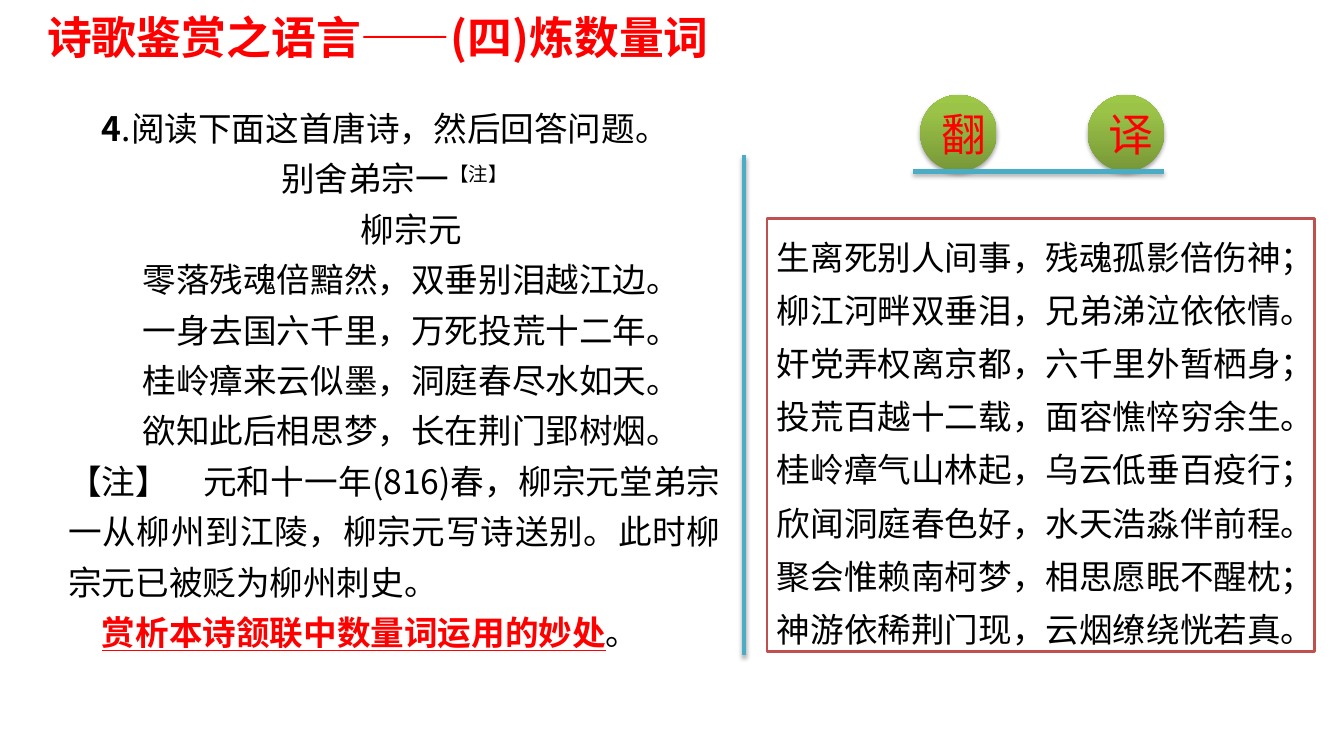
from lxml.etree import fromstring
from pptx import Presentation
from pptx.dml.color import RGBColor
from pptx.enum.shapes import MSO_CONNECTOR as Line, MSO_SHAPE as Shape
from pptx.enum.text import MSO_ANCHOR as Anchor, MSO_AUTO_SIZE as Fit, PP_ALIGN as Align
from pptx.oxml.ns import qn
from pptx.util import Cm, Pt

FACE = "Noto Sans CJK SC"
RED, BLACK, TEAL = "FF0000", "000000", "4BACC6"
NS = 'xmlns:a="http://schemas.openxmlformats.org/drawingml/2006/main"'
GLOW = f"""<a:effectLst {NS}><a:outerShdw blurRad="40000" dist="23000" dir="5400000"
 rotWithShape="0"><a:srgbClr val="000000"><a:alpha val="35000"/></a:srgbClr>
 </a:outerShdw></a:effectLst>"""
GREEN = f"""<a:gradFill {NS} rotWithShape="1"><a:gsLst>
 <a:gs pos="0"><a:srgbClr val="779737"/></a:gs>
 <a:gs pos="80000"><a:srgbClr val="9BC348"/></a:gs>
 <a:gs pos="100000"><a:srgbClr val="9DC746"/></a:gs>
 </a:gsLst><a:lin ang="16200000" scaled="0"/></a:gradFill>"""

POEM = [
    "零落残魂倍黯然，双垂别泪越江边。",
    "一身去国六千里，万死投荒十二年。",
    "桂岭瘴来云似墨，洞庭春尽水如天。",
    "欲知此后相思梦，长在荆门郢树烟。",
]
NOTE = "【注】\u3000元和十一年(816)春，柳宗元堂弟宗一从柳州到江陵，柳宗元写诗送别。此时柳宗元已被贬为柳州刺史。".replace("\u3000", "　")
PROSE = [
    "生离死别人间事，残魂孤影倍伤神；",
    "柳江河畔双垂泪，兄弟涕泣依依情。",
    "奸党弄权离京都，六千里外暂栖身；",
    "投荒百越十二载，面容憔悴穷余生。",
    "桂岭瘴气山林起，乌云低垂百疫行；",
    "欣闻洞庭春色好，水天浩淼伴前程。",
    "聚会惟赖南柯梦，相思愿眠不醒枕；",
    "神游依稀荆门现，云烟缭绕恍若真。",
]


def paint(target, tint):
    """Give a fill, line or font colour from a hex string."""
    target.rgb = RGBColor.from_string(tint)


def style(font, size, tint=BLACK, bold=False, line=False, base=0):
    """Set the face, size and look of a font."""
    font.size, font.bold = Pt(size), bold
    if line:
        font.underline = True
    paint(font.color, tint)
    font.name = FACE
    rpr = font._rPr
    rpr.append(fromstring(f'<a:ea {NS} typeface="{FACE}"/>'))
    if base:
        rpr.set("baseline", str(base * 1000))


def write(frame, rows, size, lead=None):
    """Fill a frame with rows of (alignment, indent, runs)."""
    frame.word_wrap = True
    for i, (align, dent, runs) in enumerate(rows):
        para = frame.add_paragraph() if i else frame.paragraphs[0]
        para.alignment = align
        if lead:
            para.line_spacing = Pt(lead)
        if dent:
            ppr = para._p.get_or_add_pPr()
            ppr.set("marL", "0")
            ppr.set("indent", str(Cm(dent)))
        for text, look in runs:
            run = para.add_run()
            run.text = text
            if len(runs) > 1:
                style(run.font, size, **look)
        if len(runs) == 1:
            style(para.font, size, **runs[0][1])


def add_text(slide, box, rows, size, lead=None):
    """Add a text box that grows with its rows."""
    frame = slide.shapes.add_textbox(*map(Cm, box)).text_frame
    write(frame, rows, size, lead)
    frame.auto_size = Fit.SHAPE_TO_FIT_TEXT


def add_panel(slide, box, lines):
    """Add the framed panel with the translated lines."""
    panel = slide.shapes.add_shape(Shape.RECTANGLE, *map(Cm, box))
    panel.shadow.inherit = False
    panel.fill.solid()
    paint(panel.fill.fore_color, "FFFFFF")
    paint(panel.line.color, "C0504D")
    panel.line.width = Pt(2)
    frame = panel.text_frame
    frame.vertical_anchor = Anchor.TOP
    write(frame, [(Align.LEFT, 0, [(text, {})]) for text in lines], 24, 38)
    frame.auto_size = Fit.SHAPE_TO_FIT_TEXT


def add_ball(slide, left, top, side, text):
    """Add a green ball with one red character."""
    ball = slide.shapes.add_shape(Shape.OVAL, Cm(left), Cm(top), Cm(side), Cm(side))
    ball.line.fill.background()
    props = ball._element.spPr
    props.find(qn("a:prstGeom")).addnext(fromstring(GREEN))
    props.append(fromstring(GLOW))
    frame = ball.text_frame
    frame.vertical_anchor = Anchor.MIDDLE
    write(frame, [(Align.CENTER, 0, [(text, {"tint": RED})])], 32)


def add_rule(slide, *ends):
    """Add a thick teal line with a soft shadow."""
    rule = slide.shapes.add_connector(Line.STRAIGHT, *map(Cm, ends))
    paint(rule.line.color, TEAL)
    rule.line.width = Pt(3)
    rule._element.spPr.append(fromstring(GLOW))


def main():
    """Build the slide and save it."""
    deck = Presentation()
    deck.slide_width, deck.slide_height = Cm(33.87), Cm(19.05)
    slide = deck.slides.add_slide(deck.slide_layouts[6])

    title = [("诗歌鉴赏之语言——(四)炼数量词", {"tint": RED, "bold": True})]
    add_text(slide, (0.94, 0.13, 18.01, 1.63), [(Align.LEFT, 0, title)], 32)

    dent = 0.85
    task = [("4", {"bold": True}), (".阅读下面这首唐诗，然后回答问题。", {})]
    name = [("别舍弟宗一", {}), ("【注】", {"base": 30})]
    quiz = [("赏析本诗颔联中数量词运用的妙处", {"tint": RED, "bold": True, "line": True}), ("。", {})]
    rows = [
        (Align.JUSTIFY, dent, task),
        (Align.CENTER, 0, name),
        *[(Align.CENTER, dent, [(text, {})]) for text in ["柳宗元", *POEM]],
        (Align.JUSTIFY, 0, [(NOTE, {})]),
        (Align.JUSTIFY, dent, quiz),
    ]
    add_text(slide, (1.47, 2.34, 16.94, 14.2), rows, 24, 36)

    add_panel(slide, (19.33, 5.51, 13.79, 10.9), PROSE)
    for i, text in enumerate("翻译"):
        add_ball(slide, 23.19 + 4.22 * i, 2.39, 1.93, text)
    add_rule(slide, 23.01, 4.32, 29.34, 4.32)
    add_rule(slide, 18.75, 3.91, 18.75, 16.51)
    deck.save("out.pptx")


if __name__ == "__main__":
    main()
